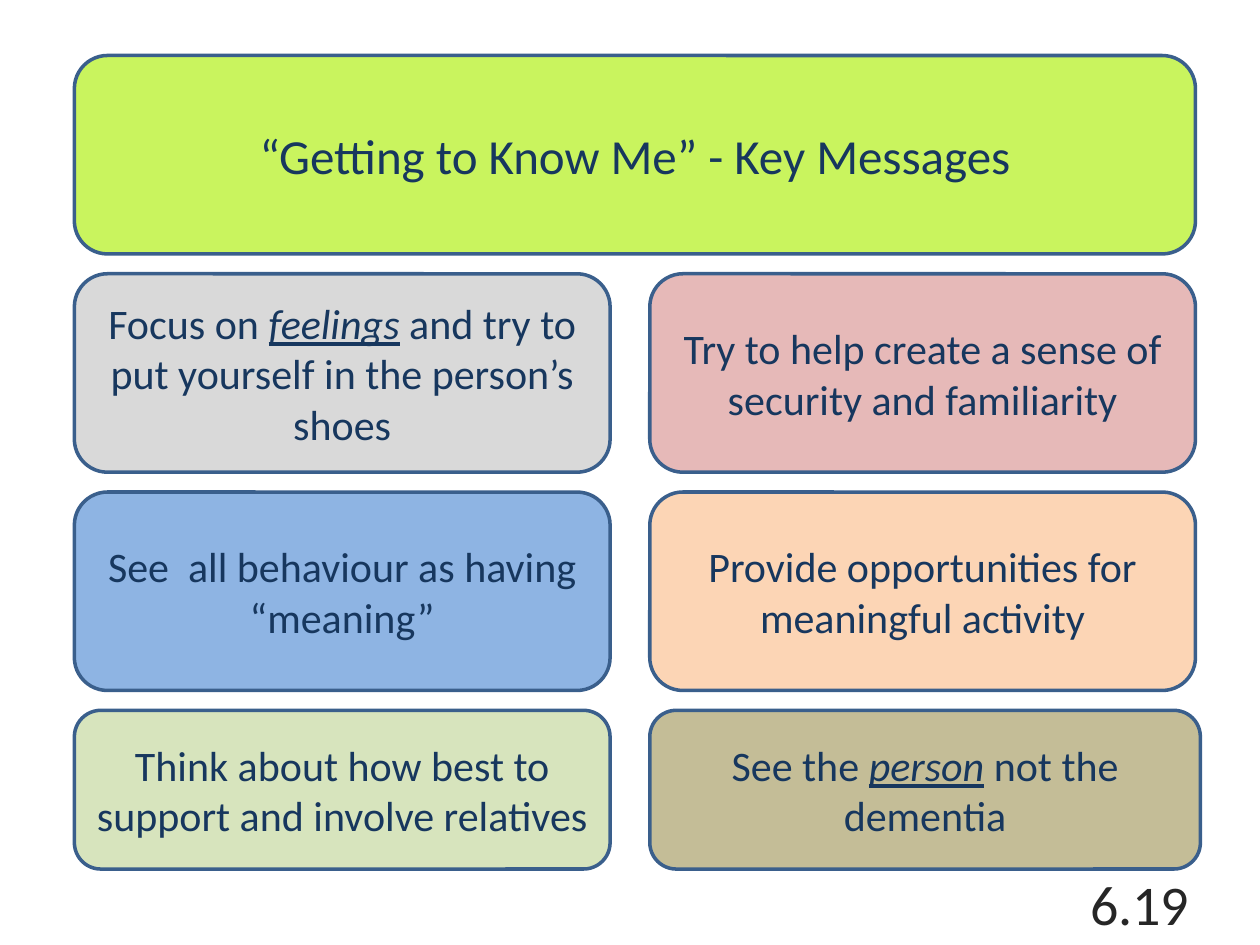
import pptx
import pptx.dml.color
import pptx.enum.shapes
import pptx.enum.text
import pptx.util
from pptx.util import Cm

THEME = {
    "font": "Calibri",
    "text": "17375E", "number": "262626", "outline": "3A5F8C",
    "title_fill": "C9F45E",
    "title_size": 28, "message_size": 24, "number_size": 32,
    "outline_width": 2,
}

TITLE = ["“Getting to Know Me” - Key Messages"]
SLIDE_NUMBER = "6.19"

# Rows of (fill, runs) pairs; a run given as a one-item tuple is emphasised.
MESSAGES = [
    [("D9D9D9", ["Focus on ", ("feelings",), " and try to put yourself in the person’s shoes"]),
     ("E6B9B8", ["Try to help create a sense of security and familiarity"])],
    [("8EB4E3", ["See  all behaviour as having “meaning”"]),
     ("FCD5B5", ["Provide opportunities for meaningful activity"])],
    [("D7E4BD", ["Think about how best to support and involve relatives"]),
     ("C4BD97", ["See the ", ("person",), " not the dementia"])],
]

# Centimetres
TOP, ROW_GAP = 1.12, 0.4
ROW_HEIGHTS = [4, 4, 4, 3.2]
COLUMNS = [(1.5, 10.8), (13.1, 11)]
LAST_BOX_EXTRA_WIDTH = 0.1


def rgb(value):
    return pptx.dml.color.RGBColor.from_string(value)


def write(shape, runs, size, color, align):
    frame = shape.text_frame
    frame.word_wrap = True
    frame.vertical_anchor = pptx.enum.text.MSO_ANCHOR.MIDDLE
    paragraph = frame.paragraphs[0]
    paragraph.alignment = align
    for part in runs:
        emphasised = isinstance(part, tuple)
        run = paragraph.add_run()
        run.text = part[0] if emphasised else part
        run.font.name = THEME["font"]
        run.font.size = pptx.util.Pt(size)
        run.font.color.rgb = rgb(color)
        if emphasised:
            run.font.italic = run.font.underline = True


def add_box(slide, left, top, width, height, fill, runs, size):
    box = slide.shapes.add_shape(
        pptx.enum.shapes.MSO_SHAPE.ROUNDED_RECTANGLE,
        Cm(left), Cm(top), Cm(width), Cm(height))
    box.shadow.inherit = False
    box.fill.solid()
    box.fill.fore_color.rgb = rgb(fill)
    box.line.color.rgb = rgb(THEME["outline"])
    box.line.width = pptx.util.Pt(THEME["outline_width"])
    write(box, runs, size, THEME["text"], pptx.enum.text.PP_ALIGN.CENTER)


def main():
    deck = pptx.Presentation()
    deck.slide_width, deck.slide_height = Cm(25.4), Cm(19.05)
    slide = deck.slides.add_slide(deck.slide_layouts[6])

    row_tops = [TOP + sum(ROW_HEIGHTS[:row]) + row * ROW_GAP
                for row in range(len(ROW_HEIGHTS))]
    left_edge = COLUMNS[0][0]
    right_edge = sum(COLUMNS[-1])
    add_box(slide, left_edge, row_tops[0], right_edge - left_edge, ROW_HEIGHTS[0],
            THEME["title_fill"], TITLE, THEME["title_size"])

    for top, height, row in zip(row_tops[1:], ROW_HEIGHTS[1:], MESSAGES):
        for (left, width), (fill, runs) in zip(COLUMNS, row):
            if row is MESSAGES[-1] and left == COLUMNS[-1][0]:
                width += LAST_BOX_EXTRA_WIDTH
            add_box(slide, left, top, width, height, fill, runs, THEME["message_size"])

    number = slide.shapes.add_textbox(Cm(21.69), Cm(17.37), Cm(2.54), Cm(1.68))
    write(number, [SLIDE_NUMBER], THEME["number_size"], THEME["number"],
          pptx.enum.text.PP_ALIGN.RIGHT)

    deck.save("out.pptx")


if __name__ == "__main__":
    main()
